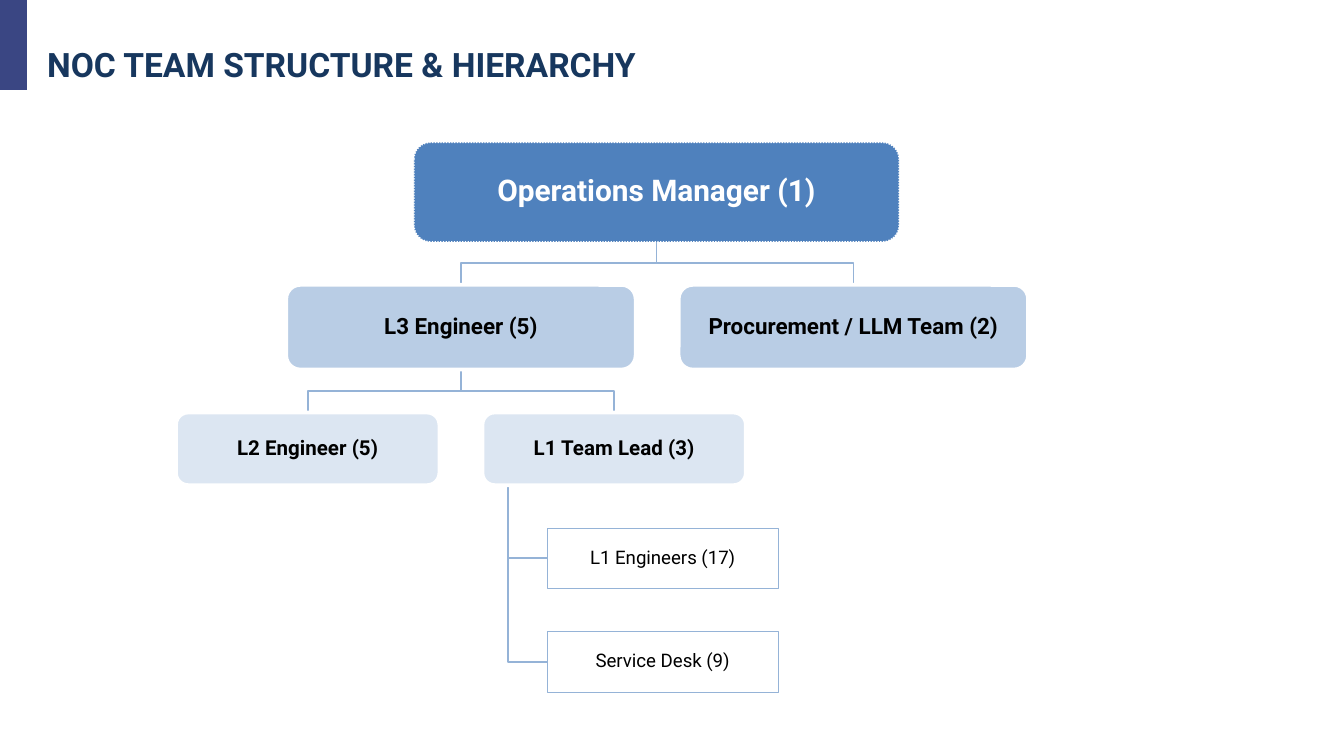
from dataclasses import dataclass

from pptx import Presentation
from pptx import util as u
from pptx.dml import color
from pptx.enum import dml, shapes, text


@dataclass(frozen=True)
class Theme:
    font: str = "Roboto"
    navy: str = "17375E"
    accent: str = "3A4683"
    line: str = "95B3D7"
    manager: str = "4F81BD"
    senior: str = "B9CDE5"
    middle: str = "DCE6F2"
    white: str = "FFFFFF"
    black: str = "000000"
    title_size: int = 18
    manager_size: int = 16
    senior_size: int = 12
    middle_size: int = 11
    leaf_size: int = 10
    connector_width: float = 1


THEME = Theme()


@dataclass(frozen=True)
class Level:
    width: float
    height: float
    fill: str
    size: int
    inset: float
    border: str = THEME.white
    border_width: float = 2
    ink: str = THEME.black
    bold: bool = True
    rounded: bool = True


MANAGER = Level(3.61, 0.74, THEME.manager, THEME.manager_size, 0.05,
                border_width=0.75, ink=THEME.white)
SENIOR = Level(2.6, 0.63, THEME.senior, THEME.senior_size, 0.04)
MIDDLE = Level(1.96, 0.54, THEME.middle, THEME.middle_size, 0.03)
LEAF = Level(1.72, 0.45, THEME.white, THEME.leaf_size, 0.01, border=THEME.line,
             border_width=0.5, bold=False, rounded=False)

GAP = 0.32
TOP = 1.06
SENIOR_TOP = TOP + MANAGER.height + GAP
MIDDLE_TOP = SENIOR_TOP + SENIOR.height + GAP
LEAF_TOP = MIDDLE_TOP + MIDDLE.height + GAP
TRUNK_INDENT = 0.19


def rgb(value):
    return color.RGBColor.from_string(value)


def write_text(shape, content, size, ink, bold=True, align=text.PP_ALIGN.CENTER,
               insets=(0, 0, 0, 0), line_spacing=0.9):
    frame = shape.text_frame
    frame.word_wrap = True
    frame.vertical_anchor = text.MSO_ANCHOR.MIDDLE
    (frame.margin_left, frame.margin_top,
     frame.margin_right, frame.margin_bottom) = map(u.Inches, insets)
    paragraph = frame.paragraphs[0]
    paragraph.alignment = align
    paragraph.line_spacing = line_spacing
    run = paragraph.add_run()
    run.text = content
    run.font.name = THEME.font
    run.font.size = u.Pt(size)
    run.font.bold = bold
    run.font.color.rgb = rgb(ink)


def add_title(slide, content):
    title = slide.shapes.title
    title.left, title.top = u.Inches(0.35), u.Inches(0.28)
    title.width, title.height = u.Inches(8.24), u.Inches(0.4)
    write_text(title, content, THEME.title_size, THEME.navy,
               align=text.PP_ALIGN.LEFT, insets=(0, 0.05, 0.1, 0.05), line_spacing=1)
    title.text_frame.auto_size = text.MSO_AUTO_SIZE.SHAPE_TO_FIT_TEXT


def add_accent_bar(slide):
    bar = slide.shapes.add_shape(shapes.MSO_SHAPE.RECTANGLE, 0, 0,
                                 u.Inches(0.2), u.Inches(0.67))
    bar.shadow.inherit = False
    bar.fill.solid()
    bar.fill.fore_color.rgb = rgb(THEME.accent)
    bar.line.fill.background()


def add_box(slide, content, left, top, level):
    kind = shapes.MSO_SHAPE.ROUNDED_RECTANGLE if level.rounded else shapes.MSO_SHAPE.RECTANGLE
    box = slide.shapes.add_shape(kind, u.Inches(left), u.Inches(top),
                                 u.Inches(level.width), u.Inches(level.height))
    box.shadow.inherit = False
    box.fill.solid()
    box.fill.fore_color.rgb = rgb(level.fill)
    box.line.color.rgb = rgb(level.border)
    box.line.width = u.Pt(level.border_width)
    write_text(box, content, level.size, level.ink, bold=level.bold,
               insets=(level.inset,) * 4)
    return box


def add_branch(slide, points):
    start, *others = [(u.Inches(x), u.Inches(y)) for x, y in points]
    builder = slide.shapes.build_freeform(*start)
    builder.add_line_segments(others, close=False)
    branch = builder.convert_to_shape()
    branch.shadow.inherit = False
    branch.fill.background()
    branch.line.color.rgb = rgb(THEME.line)
    branch.line.width = u.Pt(THEME.connector_width)


def add_fork(slide, parent_x, child_xs, bottom):
    top = bottom - GAP
    middle = bottom - GAP / 2
    for child_x in child_xs:
        add_branch(slide, [(parent_x, top), (parent_x, middle),
                           (child_x, middle), (child_x, bottom)])


def add_hierarchy(slide):
    manager_left = 3.08
    senior_lefts = [2.13 + i * (SENIOR.width + GAP) for i in range(2)]
    middle_lefts = [1.31 + i * (MIDDLE.width + GAP) for i in range(2)]
    leaf_left = 4.07
    leaf_tops = [LEAF_TOP + i * (LEAF.height + GAP) for i in range(2)]

    senior_centers = [left + SENIOR.width / 2 for left in senior_lefts]
    middle_centers = [left + MIDDLE.width / 2 for left in middle_lefts]
    add_fork(slide, manager_left + MANAGER.width / 2, senior_centers, SENIOR_TOP)
    add_fork(slide, senior_centers[0], middle_centers, MIDDLE_TOP)
    trunk_x = middle_lefts[1] + TRUNK_INDENT
    for top in leaf_tops:
        center = top + LEAF.height / 2
        add_branch(slide, [(trunk_x, MIDDLE_TOP + MIDDLE.height),
                           (trunk_x, center), (leaf_left, center)])

    manager = add_box(slide, "Operations Manager (1)", manager_left, TOP, MANAGER)
    manager.line.dash_style = dml.MSO_LINE.ROUND_DOT
    for content, left in zip(["L3 Engineer (5)", "Procurement / LLM Team (2)"], senior_lefts):
        add_box(slide, content, left, SENIOR_TOP, SENIOR)
    for content, left in zip(["L2 Engineer (5)", "L1 Team Lead (3)"], middle_lefts):
        add_box(slide, content, left, MIDDLE_TOP, MIDDLE)
    for content, top in zip(["L1 Engineers (17)", "Service Desk (9)"], leaf_tops):
        add_box(slide, content, leaf_left, top, LEAF)


def main():
    presentation = Presentation()
    presentation.slide_width = u.Inches(10)
    presentation.slide_height = presentation.slide_width * 9 // 16
    slide = presentation.slides.add_slide(presentation.slide_layouts[5])
    add_accent_bar(slide)
    add_title(slide, "NOC TEAM STRUCTURE & HIERARCHY")
    add_hierarchy(slide)
    presentation.save("out.pptx")


if __name__ == "__main__":
    main()
